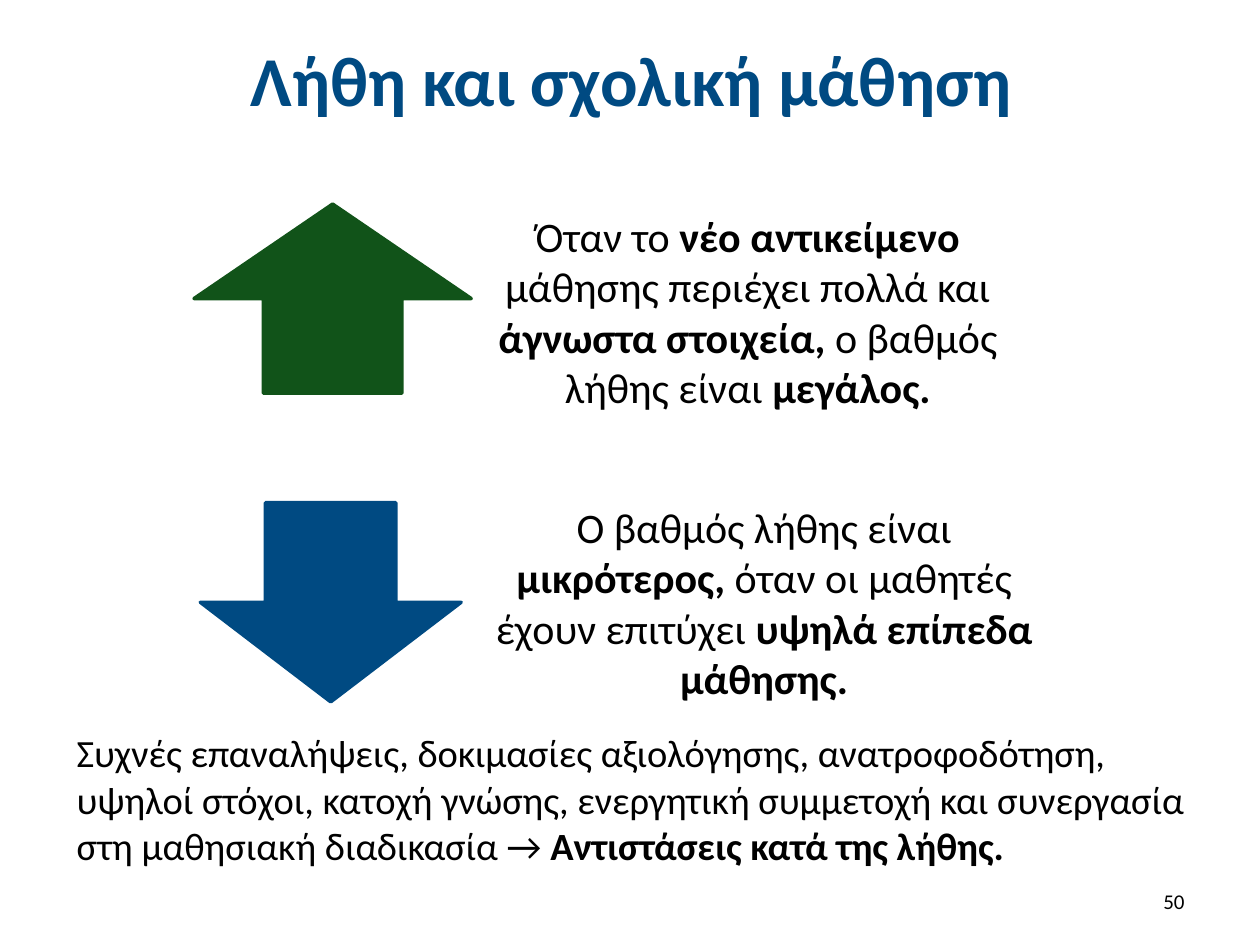
import pptx
import pptx.util
import pptx.dml.color
import pptx.enum.shapes
import pptx.enum.text

Inches, Pt = pptx.util.Inches, pptx.util.Pt
SHAPE = pptx.enum.shapes.MSO_SHAPE
ALIGN = pptx.enum.text.PP_ALIGN
ANCHOR = pptx.enum.text.MSO_ANCHOR

FONT = "Calibri"
COLORS = {"blue": "004A82", "green": "115319", "text": "000000"}


def rgb(name):
    return pptx.dml.color.RGBColor.from_string(COLORS[name])


def add_text(s, parts, x, y, w, h, size=24, color="text", align=ALIGN.LEFT,
             anchor=ANCHOR.TOP, before=0):
    """Add one paragraph; parts is a list of (text, bold) pairs."""
    tf = s.shapes.add_textbox(Inches(x), Inches(y), Inches(w), Inches(h)).text_frame
    tf.word_wrap = True
    tf.vertical_anchor = anchor
    p = tf.paragraphs[0]
    p.alignment = align
    p.space_before = Pt(before)
    for text, bold in parts:
        r = p.add_run()
        r.text = text
        r.font.name = FONT
        r.font.size = Pt(size)
        r.font.bold = bold
        r.font.color.rgb = rgb(color)


def add_arrow(s, kind, color, x, y, w, h):
    sp = s.shapes.add_shape(kind, Inches(x), Inches(y), Inches(w), Inches(h))
    sp.shadow.inherit = False
    sp.fill.solid()
    sp.fill.fore_color.rgb = rgb(color)
    sp.line.color.rgb = rgb(color)
    sp.line.width = Pt(2)


def main():
    prs = pptx.Presentation()
    prs.slide_width, prs.slide_height = Inches(10), Inches(7.5)
    s = prs.slides.add_slide(prs.slide_layouts[6])

    # Title
    add_text(s, [("Λήθη και σχολική μάθηση", True)], 0.51, 0.13, 9, 0.99,
             size=40, color="blue", align=ALIGN.CENTER, anchor=ANCHOR.MIDDLE)

    # High degree of forgetting
    add_arrow(s, SHAPE.UP_ARROW, "green", 1.54, 1.62, 2.2, 1.5)
    add_text(s, [("Όταν το ", False), ("νέο αντικείμενο ", True),
                 ("μάθησης περιέχει πολλά και ", False),
                 ("άγνωστα στοιχεία,", True),
                 (" ο βαθμός λήθης είναι ", False), ("μεγάλος.", True)],
             3.53, 1.62, 4.81, 1.81, align=ALIGN.CENTER, before=12)

    # Low degree of forgetting
    add_arrow(s, SHAPE.DOWN_ARROW, "blue", 1.59, 3.99, 2.07, 1.58)
    add_text(s, [("Ο βαθμός λήθης είναι ", False), ("μικρότερος,", True),
                 (" όταν οι μαθητές έχουν επιτύχει ", False),
                 ("υψηλά επίπεδα μάθησης.", True)],
             3.66, 3.93, 4.81, 1.81, align=ALIGN.CENTER, before=12)

    # Conclusion
    add_text(s, [("Συχνές επαναλήψεις, δοκιμασίες αξιολόγησης, ανατροφοδότηση, "
                  "υψηλοί στόχοι, κατοχή γνώσης, ενεργητική συμμετοχή και "
                  "συνεργασία στη μαθησιακή διαδικασία → ", False),
                 ("Αντιστάσεις κατά της λήθης.", True)],
             0.51, 5.74, 9.13, 1.21, size=22)

    # Slide number
    add_text(s, [("50", False)], 7.17, 6.95, 2.33, 0.4, size=12,
             align=ALIGN.RIGHT, anchor=ANCHOR.MIDDLE)

    prs.save("out.pptx")


if __name__ == "__main__":
    main()
